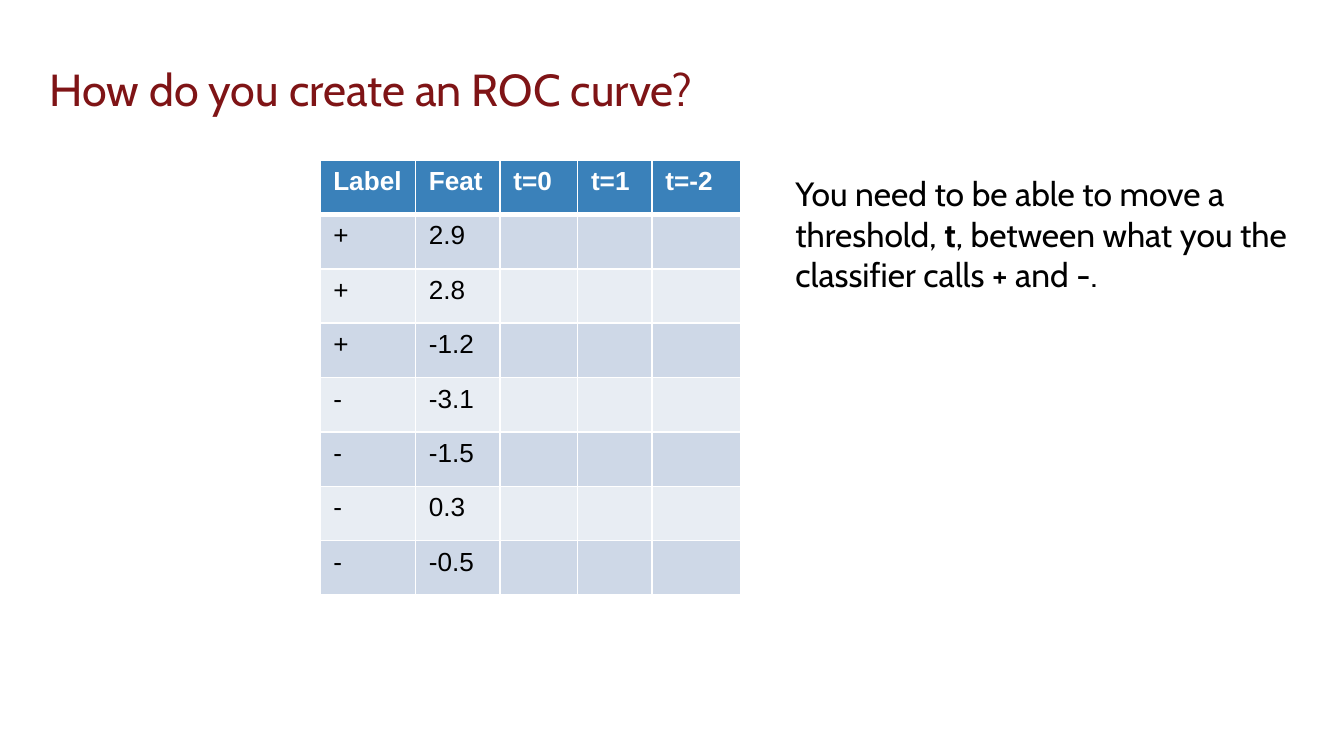
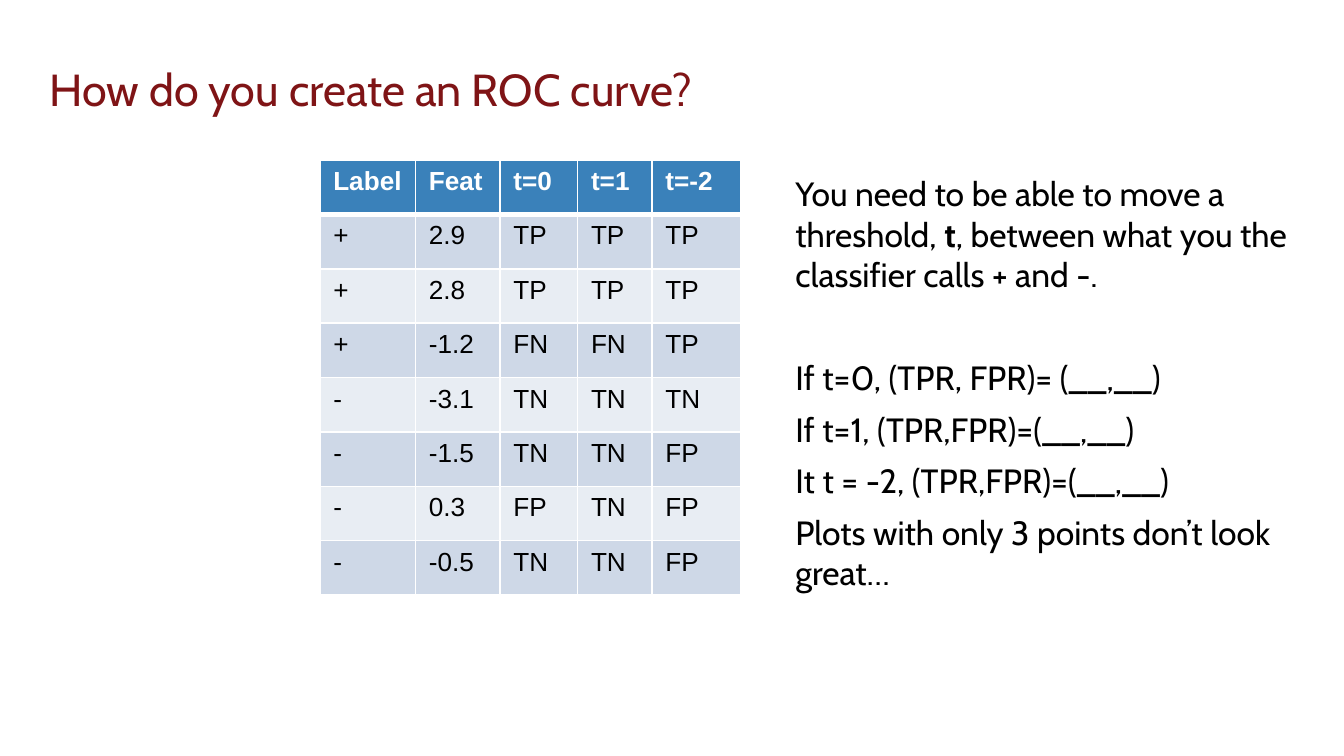
from typing import NamedTuple

import lxml.etree
import pptx
import pptx.dml.color
import pptx.enum.text
import pptx.oxml.ns
import pptx.util

Pt = pptx.util.Pt

RED, BLACK, WHITE = "7F1416", "000000", "FFFFFF"
HEAD, BANDS = "3A81BA", ("CED8E7", "E8EDF3")
SANS, PLAIN = "Cabin", "Arial"
TOP = 85.68
WIDTHS = (51.2, 45.3, 41.6, 39.8, 47.4)
ROW = 29.16
CUTS = (0, 1, -2)


class Box(NamedTuple):
    left: float
    top: float
    width: float
    height: float


class Run(NamedTuple):
    text: str
    size: float = 18
    font: str = SANS
    hue: str = BLACK
    bold: bool = False


class Para(NamedTuple):
    runs: list[Run]
    before: float = 0


class Sample(NamedTuple):
    label: str
    feat: float

    def judge(self, cut: float) -> str:
        """Name the outcome when values above the cut are called +."""
        call = "+" if self.feat > cut else "-"
        return ("T" if call == self.label else "F") + ("P" if call == "+" else "N")


SAMPLES = [
    Sample("+", 2.9), Sample("+", 2.8), Sample("+", -1.2),
    Sample("-", -3.1), Sample("-", -1.5), Sample("-", 0.3), Sample("-", -0.5),
]
TITLE = [Para([Run("How do you create an ROC curve?", 24, hue=RED)])]
INTRO = [Para([
    Run("You need to be able to move a threshold, "),
    Run("t", bold=True),
    Run(", between what you the classifier calls + and -."),
])]
RATES = [
    Para([Run("If t=0, (TPR, FPR)= (__,__)")], 33.7),
    Para([Run("If t=1, (TPR,FPR)=(__,__)")], 6),
    Para([Run("It t = -2, (TPR,FPR)=(__,__)")], 6),
    Para([Run("Plots with only 3 points don’t look great…")], 6),
]


def color(code: str) -> pptx.dml.color.RGBColor:
    return pptx.dml.color.RGBColor.from_string(code)


def add_run(para, run: Run) -> None:
    item = para.add_run()
    item.text = run.text
    item.font.size = Pt(run.size)
    item.font.name = run.font
    item.font.bold = run.bold
    item.font.color.rgb = color(run.hue)


def add_text(slide, box: Box, paras: list[Para], anchor) -> None:
    frame = slide.shapes.add_textbox(*map(Pt, box)).text_frame
    frame.word_wrap = True
    frame.vertical_anchor = anchor
    frame.margin_left = frame.margin_right = Pt(7.2)
    frame.margin_top = frame.margin_bottom = Pt(7.2)
    for i, para in enumerate(paras):
        line = frame.add_paragraph() if i else frame.paragraphs[0]
        if para.before:
            line.space_before = Pt(para.before)
        for run in para.runs:
            add_run(line, run)


def add_edge(cell, side: str, width: float) -> None:
    name = pptx.oxml.ns.qn
    edge = lxml.etree.SubElement(
        cell._tc.get_or_add_tcPr(), name(f"a:ln{side}"), w=str(Pt(width)))
    fill = lxml.etree.SubElement(edge, name("a:solidFill"))
    lxml.etree.SubElement(fill, name("a:srgbClr"), val=WHITE)


def add_table(slide, filled: bool) -> None:
    rows = [["Label", "Feat", *(f"t={cut}" for cut in CUTS)]]
    for item in SAMPLES:
        marks = [item.judge(cut) if filled else "" for cut in CUTS]
        rows.append([item.label, str(item.feat), *marks])
    box = Box(171.36, TOP, sum(WIDTHS), ROW * len(rows))
    table = slide.shapes.add_table(len(rows), len(WIDTHS), *map(Pt, box)).table
    for col, width in zip(table.columns, WIDTHS):
        col.width = Pt(width)
    for r, row in enumerate(rows):
        table.rows[r].height = Pt(ROW)
        top = r == 0
        for c, text in enumerate(row):
            cell = table.cell(r, c)
            for side in "LRTB":
                thick = (r, side) in ((0, "B"), (1, "T"))
                add_edge(cell, side, 3 if thick else 1)
            cell.fill.solid()
            cell.fill.fore_color.rgb = color(HEAD if top else BANDS[(r - 1) % 2])
            if text:
                hue = WHITE if top else BLACK
                add_run(cell.text_frame.paragraphs[0], Run(text, 14, PLAIN, hue, top))


def add_page(deck, body: list[Para], filled: bool) -> None:
    slide = deck.slides.add_slide(deck.slide_layouts[6])
    anchor = pptx.enum.text.MSO_ANCHOR
    add_text(slide, Box(19.44, 5.04, 679.68, 64.08), TITLE, anchor.BOTTOM)
    add_text(slide, Box(419.04, TOP, 280.8, 227.52), body, anchor.TOP)
    add_table(slide, filled)


def main() -> None:
    deck = pptx.Presentation()
    deck.slide_width, deck.slide_height = Pt(720), Pt(405)
    add_page(deck, INTRO, filled=False)
    add_page(deck, INTRO + RATES, filled=True)
    deck.save("out.pptx")


if __name__ == "__main__":
    main()
